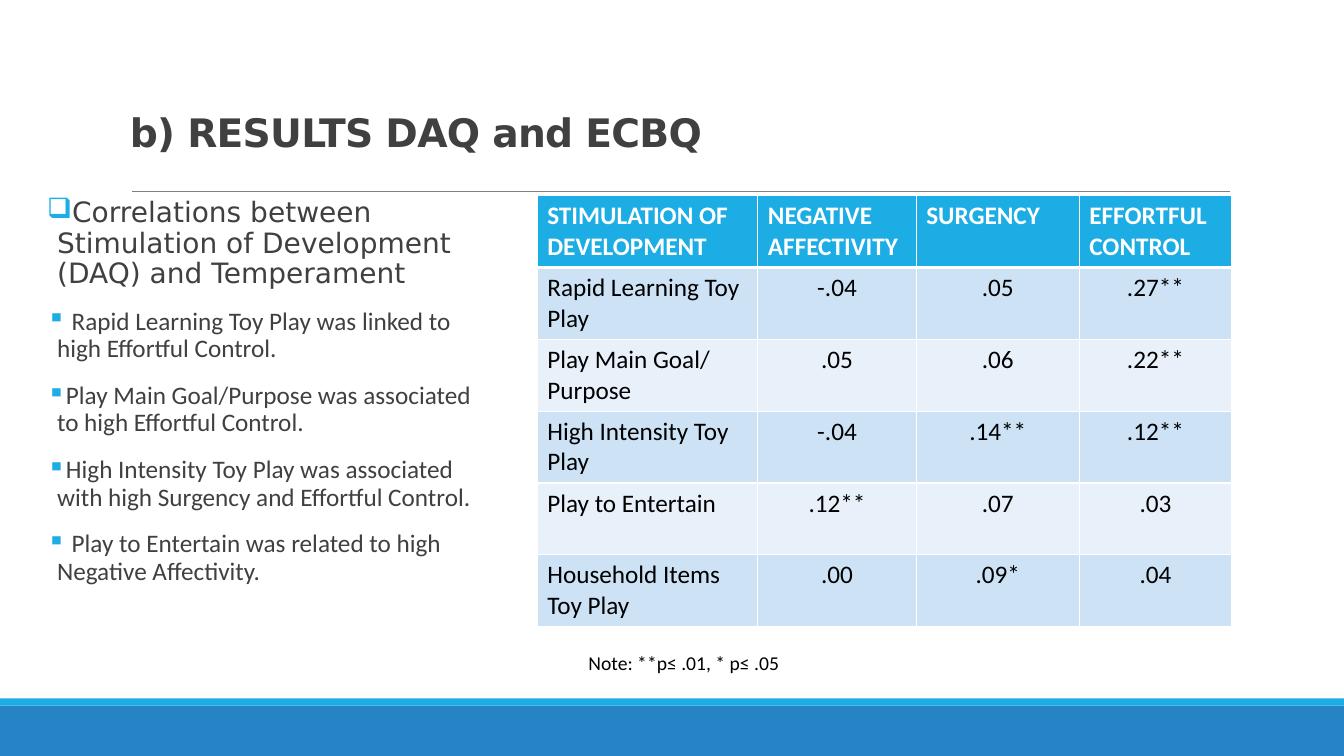
from lxml.etree import SubElement
from pptx import Presentation
from pptx.dml.color import RGBColor
from pptx.enum.shapes import MSO_CONNECTOR, MSO_SHAPE
from pptx.enum.text import MSO_ANCHOR, MSO_AUTO_SIZE, PP_ALIGN
from pptx.oxml.ns import qn
from pptx.util import Cm, Pt

TITLE = "b) RESULTS DAQ and ECBQ"
HEADING = "Correlations between Stimulation of Development (DAQ) and Temperament"
FINDINGS = [
    " Rapid Learning Toy Play was linked to high Effortful Control.",
    "Play Main Goal/Purpose was associated to high Effortful Control.",
    "High Intensity Toy Play was associated with high Surgency and Effortful Control.",
    " Play to Entertain was related to high Negative Affectivity.",
]
CORRELATIONS = [
    ("STIMULATION OF DEVELOPMENT", "NEGATIVE AFFECTIVITY", "SURGENCY", "EFFORTFUL CONTROL"),
    ("Rapid Learning Toy Play", "-.04", ".05", ".27**"),
    ("Play Main Goal/ Purpose", ".05", ".06", ".22**"),
    ("High Intensity Toy Play", "-.04", ".14**", ".12**"),
    ("Play to Entertain", ".12**", ".07", ".03"),
    ("Household Items Toy Play", ".00", ".09*", ".04"),
]
NOTE = "Note: **p≤ .01, * p≤ .05"

COLORS = {
    "blue": "2683C6", "cyan": "1CADE4", "rule": "808080", "text": "404040",
    "black": "000000", "white": "FFFFFF", "band_dark": "CDE3F5", "band_light": "E8F1FA",
}
BODY_FONT, HEAD_FONT = "Calibri", "DejaVu Sans"
SLIDE_W, SLIDE_H = Cm(33.87), Cm(19.05)
COL_WIDTHS = [Cm(5.56), Cm(3.99), Cm(4.11), Cm(3.84)]
ROW_H = Cm(1.81)


def rgb(name):
    return RGBColor.from_string(COLORS[name])


def style(p, size, color, font=BODY_FONT, bold=False):
    for r in p.runs:
        r.font.size, r.font.name, r.font.bold = Pt(size), font, bold
        r.font.color.rgb = rgb(color)


def add_band(s, top, height, color):
    band = s.shapes.add_shape(MSO_SHAPE.RECTANGLE, 0, top, SLIDE_W, height)
    band.shadow.inherit = False
    band.fill.solid()
    band.fill.fore_color.rgb = rgb(color)
    band.line.fill.background()


def add_rule(s):
    rule = s.shapes.add_connector(MSO_CONNECTOR.STRAIGHT, Cm(3.33), Cm(4.83), Cm(31), Cm(4.83))
    rule.line.color.rgb = rgb("rule")
    rule.line.width = Pt(0.5)
    SubElement(rule._element.spPr, qn("a:effectLst"))


def add_title(s):
    title = s.shapes.title
    title.left, title.top, title.width, title.height = Cm(3.02), Cm(0), Cm(27.94), Cm(4.04)
    tf = title.text_frame
    tf.text = TITLE
    tf.auto_size = MSO_AUTO_SIZE.NONE
    tf.vertical_anchor = MSO_ANCHOR.BOTTOM
    p = tf.paragraphs[0]
    p.alignment, p.line_spacing = PP_ALIGN.LEFT, 0.85
    style(p, 28, "text", HEAD_FONT, bold=True)
    p.runs[0].font._element.set("spc", "-50")


def set_bullet(p, char):
    pPr = p._p.get_or_add_pPr()
    pPr.set("marL", str(Cm(0.25)))
    pPr.set("indent", str(Cm(-0.25)))
    color = SubElement(pPr, qn("a:buClr"))
    SubElement(color, qn("a:srgbClr"), val=COLORS["cyan"])
    SubElement(pPr, qn("a:buChar"), char=char)


def add_findings(s):
    tf = s.shapes.add_textbox(Cm(1.19), Cm(4.88), Cm(11.07), Cm(11.61)).text_frame
    tf.word_wrap = True
    tf.margin_left = tf.margin_right = 0
    tf.text = "\n".join([HEADING, *FINDINGS])
    for i, p in enumerate(tf.paragraphs):
        p.line_spacing, p.space_before, p.space_after = 0.9, Pt(12), Pt(2)
        set_bullet(p, "▪" if i else "❑")
        style(p, 18 if i else 20, "text", BODY_FONT if i else HEAD_FONT)


def set_borders(cell, widths):
    tcPr = cell._tc.get_or_add_tcPr()
    for side, width in zip("LRTB", widths):
        ln = SubElement(tcPr, qn(f"a:ln{side}"), w=str(Pt(width)))
        fill = SubElement(ln, qn("a:solidFill"))
        SubElement(fill, qn("a:srgbClr"), val=COLORS["white"])


def add_correlations(s):
    table = s.shapes.add_table(len(CORRELATIONS), len(COL_WIDTHS), Cm(13.54), Cm(4.93),
                               sum(COL_WIDTHS), ROW_H * len(CORRELATIONS)).table
    for col, width in zip(table.columns, COL_WIDTHS):
        col.width = width
    for i, row in enumerate(CORRELATIONS):
        header = i == 0
        fill = "cyan" if header else "band_dark" if i % 2 else "band_light"
        for j, text in enumerate(row):
            cell = table.cell(i, j)
            cell.text = text
            set_borders(cell, (1, 1, 3 if i == 1 else 1, 3 if header else 1))
            cell.fill.solid()
            cell.fill.fore_color.rgb = rgb(fill)
            p = cell.text_frame.paragraphs[0]
            p.alignment = PP_ALIGN.LEFT if header or j == 0 else PP_ALIGN.CENTER
            style(p, 18, "white" if header else "black", bold=header)


def add_note(s):
    tf = s.shapes.add_textbox(Cm(14.58), Cm(16.28), Cm(6.91), Cm(0.86)).text_frame
    tf.word_wrap = True
    tf.text = NOTE
    style(tf.paragraphs[0], 14, "black")


def main():
    prs = Presentation()
    prs.slide_width, prs.slide_height = SLIDE_W, SLIDE_H
    s = prs.slides.add_slide(prs.slide_layouts[5])
    add_band(s, Cm(17.78), Cm(1.27), "blue")
    add_band(s, Cm(17.6), Cm(0.18), "cyan")
    add_rule(s)
    add_title(s)
    add_findings(s)
    add_correlations(s)
    add_note(s)
    prs.save("out.pptx")


if __name__ == "__main__":
    main()
